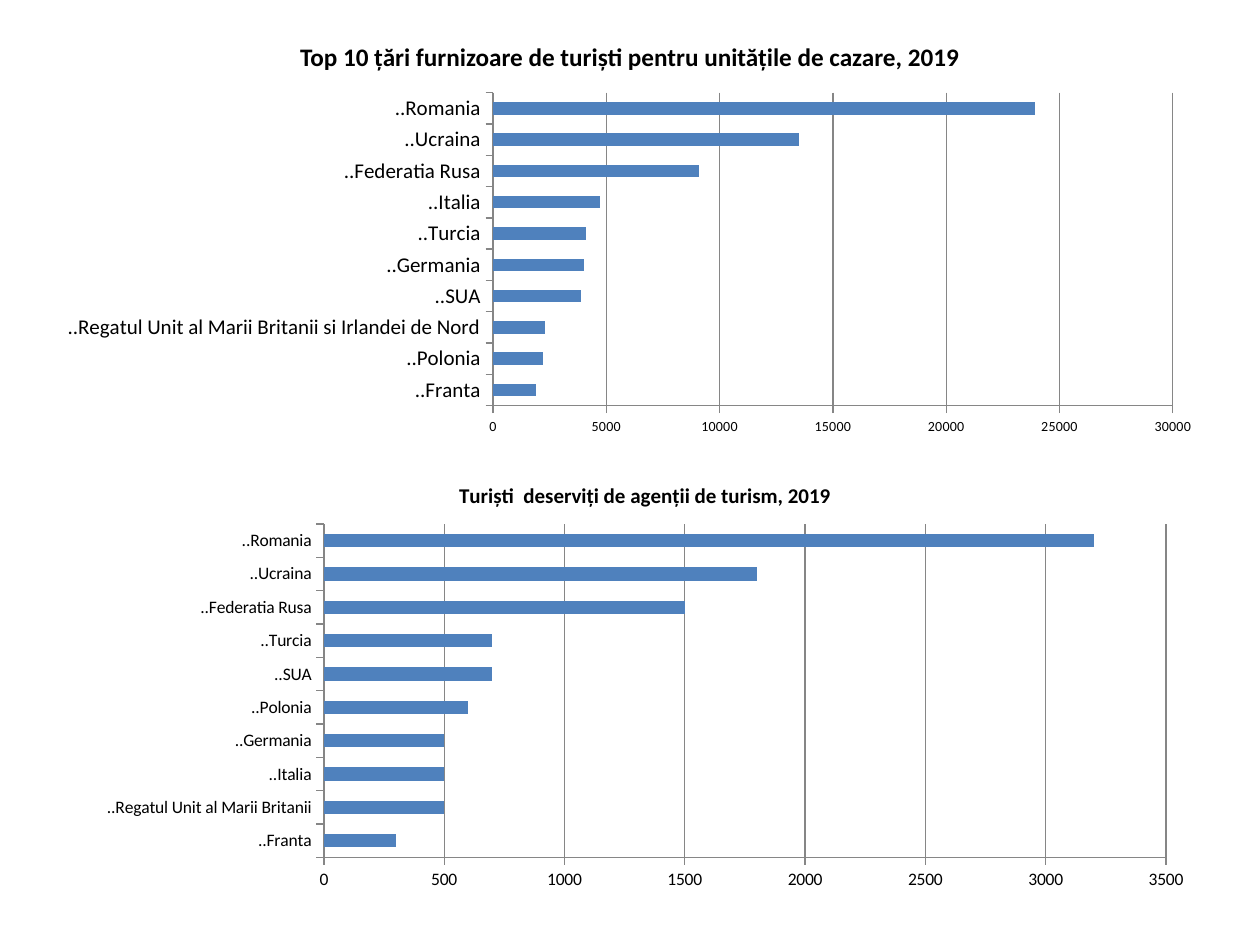
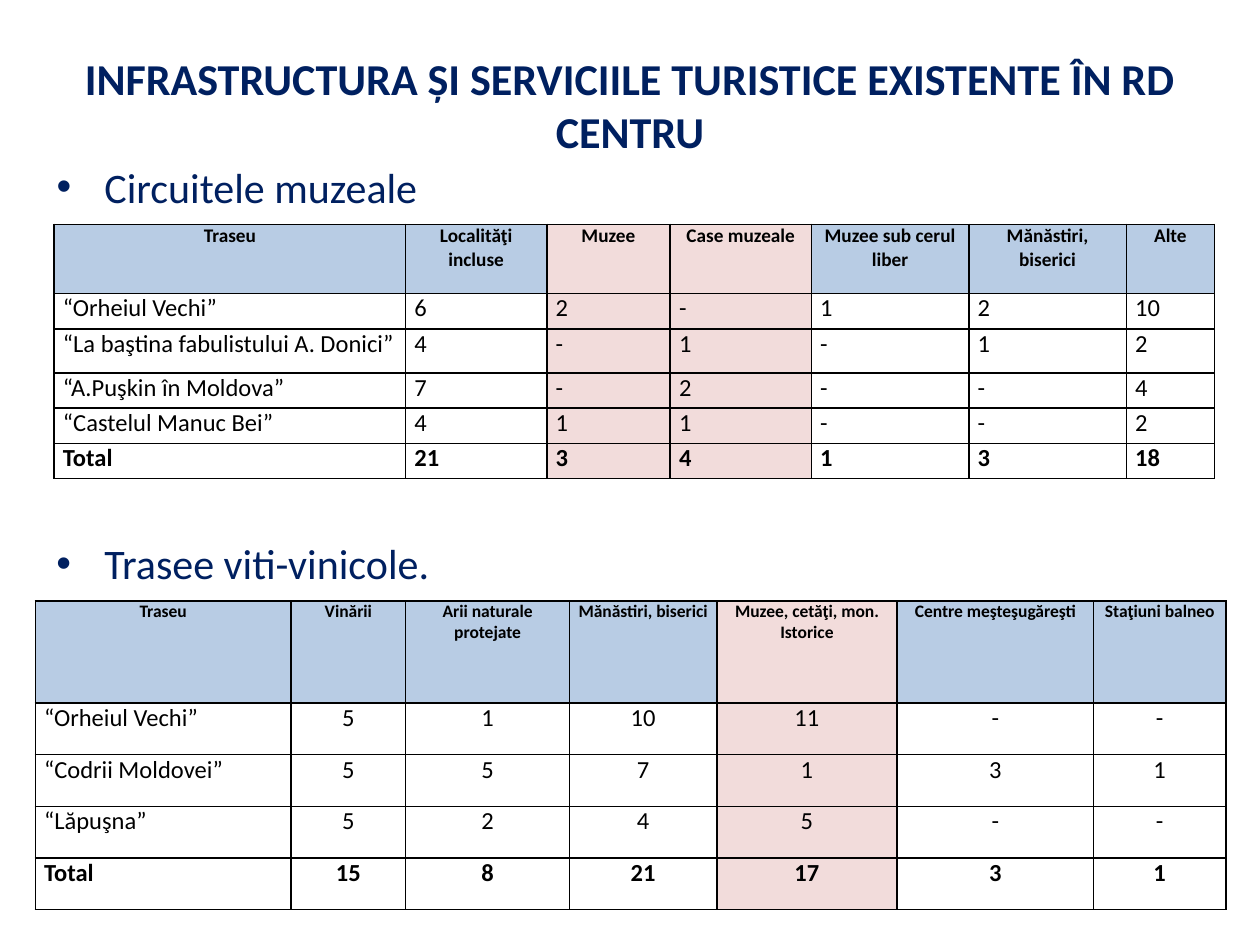
"""Builds two slides on tourism in RD Centru: arrival charts and route tables."""
import lxml.etree
import pptx
import pptx.chart.data
import pptx.dml.color
import pptx.enum.chart
import pptx.enum.text
import pptx.oxml.ns
import pptx.util

Inches, Pt, qn = pptx.util.Inches, pptx.util.Pt, pptx.oxml.ns.qn
ALIGN = pptx.enum.text.PP_ALIGN
ANCHOR = pptx.enum.text.MSO_ANCHOR

COLORS = {
    "text": "000000", "navy": "002060", "bar": "4F81BD", "axis": "868686",
    "header": "B8CCE4", "accent": "F2DCDB", "border": "000000",
}

ARRIVALS = {
    "..Franta": 1900, "..Polonia": 2200,
    "..Regatul Unit al Marii Britanii si Irlandei de Nord": 2300,
    "..SUA": 3900, "..Germania": 4000, "..Turcia": 4100, "..Italia": 4700,
    "..Federatia Rusa": 9100, "..Ucraina": 13500, "..Romania": 23900,
}
AGENCY_TOURISTS = {
    "..Franta": 300, "..Regatul Unit al Marii Britanii": 500, "..Italia": 500,
    "..Germania": 500, "..Polonia": 600, "..SUA": 700, "..Turcia": 700,
    "..Federatia Rusa": 1500, "..Ucraina": 1800, "..Romania": 3200,
}
MUSEUM_ROUTES = [
    ["Traseu", "Localităţi incluse", "Muzee", "Case muzeale",
     "Muzee sub cerul liber", "Mănăstiri, biserici", "Alte"],
    ["“Orheiul Vechi”", "6", "2", "-", "1", "2", "10"],
    ["“La baştina fabulistului A. Donici”", "4", "-", "1", "-", "1", "2"],
    ["“A.Puşkin în Moldova”", "7", "-", "2", "-", "-", "4"],
    ["“Castelul Manuc Bei”", "4", "1", "1", "-", "-", "2"],
    ["Total", "21", "3", "4", "1", "3", "18"],
]
WINE_ROUTES = [
    ["Traseu", "Vinării", "Arii naturale protejate", "Mănăstiri, biserici",
     "Muzee, cetăţi, mon. Istorice", "Centre meşteşugăreşti", "Staţiuni balneo"],
    ["“Orheiul Vechi”", "5", "1", "10", "11", "-", "-"],
    ["“Codrii Moldovei”", "5", "5", "7", "1", "3", "1"],
    ["“Lăpuşna”", "5", "2", "4", "5", "-", "-"],
    ["Total", "15", "8", "21", "17", "3", "1"],
]


class Deck:
    """Holds the presentation style and the current slide."""

    font = "Calibri"

    def __init__(self):
        self.prs = pptx.Presentation()
        self.prs.slide_width, self.prs.slide_height = Inches(10), Inches(7.5)

    def slide(self):
        self.s = self.prs.slides.add_slide(self.prs.slide_layouts[6])

    def style(self, font, size, color="text", bold=False):
        font.name, font.size, font.bold = self.font, Pt(size), bold
        font.color.rgb = pptx.dml.color.RGBColor.from_string(COLORS[color])

    def text(self, text, box, size, color, bold=False):
        tf = self.s.shapes.add_textbox(*map(Inches, box)).text_frame
        tf.word_wrap = True
        p = tf.paragraphs[0]
        p.text = text
        self.style(p.runs[0].font, size, color, bold)
        return tf, p

    def title(self, text, box, size, color):
        tf, p = self.text(text, box, size, color, bold=True)
        tf.vertical_anchor = ANCHOR.MIDDLE
        p.alignment = ALIGN.CENTER

    def bullet(self, text, box):
        tf, p = self.text(text, box, 24, "navy")
        p.space_before = Pt(4.8)
        pPr = p._p.get_or_add_pPr()
        pPr.set("marL", str(Inches(0.38)))
        pPr.set("indent", str(-Inches(0.38)))
        lxml.etree.SubElement(pPr, qn("a:buFont")).set("typeface", "Arial")
        lxml.etree.SubElement(pPr, qn("a:buChar")).set("char", "•")

    def bar_chart(self, values, box, category_size, value_size, title=None):
        data = pptx.chart.data.CategoryChartData()
        data.categories = list(values)
        data.add_series("Series 1", list(values.values()))
        kind = pptx.enum.chart.XL_CHART_TYPE.BAR_CLUSTERED
        chart = self.s.shapes.add_chart(kind, *map(Inches, box), data).chart
        self.style(chart.font, 10)
        chart.has_legend = False
        chart.has_title = title is not None
        if title:
            p = chart.chart_title.text_frame.paragraphs[0]
            p.text = title
            self.style(p.runs[0].font, 12, bold=True)
            chart.chart_title.include_in_layout = False
        plot = chart.plots[0]
        plot.gap_width, plot.vary_by_categories = 150, False
        fill = plot.series[0].format.fill
        fill.solid()
        fill.fore_color.rgb = pptx.dml.color.RGBColor.from_string(COLORS["bar"])
        chart.value_axis.has_major_gridlines = True
        chart.category_axis.has_major_gridlines = False
        for axis, size in ((chart.category_axis, category_size), (chart.value_axis, value_size)):
            axis.major_tick_mark = pptx.enum.chart.XL_TICK_MARK.OUTSIDE
            self.style(axis.tick_labels.font, size)
            self.line(axis.format.line)
        self.line(chart.value_axis.major_gridlines.format.line)

    def line(self, line):
        line.width = Pt(0.75)
        line.color.rgb = pptx.dml.color.RGBColor.from_string(COLORS["axis"])

    def table(self, rows, left, top, widths, heights, accents, header_size, align):
        box = (left, top, sum(widths), sum(heights))
        t = self.s.shapes.add_table(len(rows), len(widths), *map(Inches, box)).table
        t.first_row = t.horz_banding = False
        for column, width in zip(t.columns, widths):
            column.width = Inches(width)
        for i, (row, height) in enumerate(zip(rows, heights)):
            t.rows[i].height = Inches(height)
            for j, text in enumerate(row):
                fill = "accent" if j in accents else "header" if i == 0 else None
                size = 14 if i else header_size
                bold = i in (0, len(rows) - 1)
                place = ALIGN.CENTER if i == 0 else align if j else ALIGN.LEFT
                self.cell(t.cell(i, j), text, fill, size, bold, place)

    def cell(self, cell, text, fill, size, bold, align):
        cell.margin_left = cell.margin_right = Inches(0.07)
        cell.margin_top = cell.margin_bottom = 0
        p = cell.text_frame.paragraphs[0]
        p.text, p.alignment = text, align
        self.style(p.runs[0].font, size, bold=bold)
        if fill:
            cell.fill.solid()
            cell.fill.fore_color.rgb = pptx.dml.color.RGBColor.from_string(COLORS[fill])
        else:
            cell.fill.background()
        tcPr = cell._tc.get_or_add_tcPr()
        for i, side in enumerate(("lnL", "lnR", "lnT", "lnB")):
            ln = lxml.etree.Element(qn("a:" + side), w=str(Pt(1)))
            solid = lxml.etree.SubElement(ln, qn("a:solidFill"))
            lxml.etree.SubElement(solid, qn("a:srgbClr")).set("val", COLORS["border"])
            tcPr.insert(i, ln)


def main():
    deck = Deck()

    deck.slide()
    deck.title("Top 10 țări furnizoare de turiști pentru unitățile de cazare, 2019",
               (0.5, 0.3, 9, 0.3), 14.4, "text")
    deck.bar_chart(ARRIVALS, (0.35, 0.68, 9.29, 2.83), 12, 8)
    deck.bar_chart(AGENCY_TOURISTS, (0.67, 3.67, 8.9, 3.46), 10, 10,
                   "Turiști  deserviți de agenții de turism, 2019")

    deck.slide()
    deck.title("INFRASTRUCTURA ȘI SERVICIILE TURISTICE EXISTENTE ÎN RD CENTRU",
               (0.5, 0.36, 9, 0.94), 25.2, "navy")
    deck.bullet("Circuitele muzeale", (0.35, 1.23, 9.15, 0.63))
    deck.table(MUSEUM_ROUTES, 0.43, 1.78, [2.79, 1.12, 0.98, 1.12, 1.25, 1.25, 0.7],
               [0.55, 0.28, 0.35, 0.28, 0.28, 0.28], (2, 3), 11, ALIGN.LEFT)
    deck.bullet("Trasee viti-vinicole.", (0.35, 4.22, 5.64, 0.5))
    deck.table(WINE_ROUTES, 0.28, 4.77, [2.03, 0.91, 1.3, 1.17, 1.43, 1.56, 1.05],
               [0.81] + [0.41] * 4, (4,), 10, ALIGN.CENTER)

    deck.prs.save("out.pptx")


if __name__ == "__main__":
    main()
